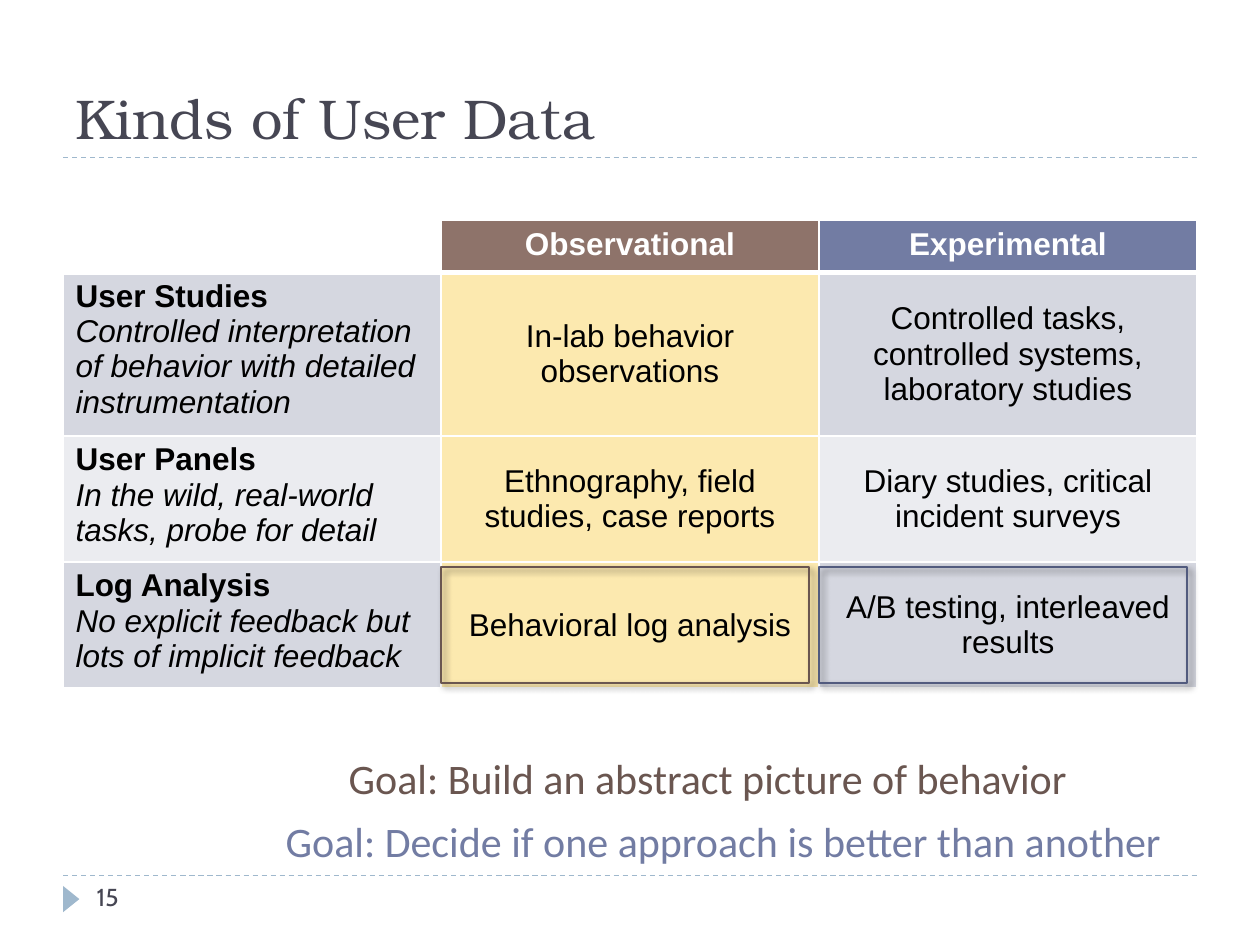
from lxml import etree
from pptx import Presentation
from pptx.dml.color import RGBColor
from pptx.enum import dml, shapes, text
from pptx.oxml import parse_xml
from pptx.oxml.ns import nsdecls, qn
from pptx.util import Cm, Pt

INK, ACCENT, BLACK, WHITE = "464653", "9FB8CD", "000000", "FFFFFF"
BROWN, BLUE = "6A5650", "727CA3"
LEFT, WIDTH, COLUMN = 1.27, 22.86, 7.62
TABLE_TOP = 4.45
ROW_HEIGHTS = [1.04, 3.3, 2.54, 2.54]
OBSERVED_FILL = "FCE9AF"
BANDS = ["D5D7E0", "EBECF0"]
HEADINGS = [("Observational", "8E736A"), ("Experimental", BLUE)]
METHODS = [
    ("User Studies",
     "Controlled interpretation of behavior with detailed instrumentation",
     "In-lab behavior observations",
     "Controlled tasks, controlled systems, laboratory studies"),
    ("User Panels",
     "In the wild, real-world tasks, probe for detail",
     "Ethnography, field studies, case reports",
     "Diary studies, critical incident surveys"),
    ("Log Analysis",
     "No explicit feedback but lots of implicit feedback",
     "Behavioral log analysis",
     "A/B testing, interleaved results"),
]
GOALS = [
    ("Goal: Build an abstract picture of behavior", 6.78, 15.04, 15.11, BROWN),
    ("Goal: Decide if one approach is better than another", 5.51, 16.31, 18.34, BLUE),
]


def rgb(value):
    return RGBColor.from_string(value)


def write(paragraph, words, color, align=text.PP_ALIGN.LEFT, **font_format):
    paragraph.alignment = align
    run = paragraph.add_run()
    run.text = words
    run.font.color.rgb = rgb(color)
    for name, value in font_format.items():
        setattr(run.font, name, value)


def add_title(slide, words):
    title = slide.shapes.title
    place = dict(left=Cm(LEFT), top=Cm(0.43), width=Cm(WIDTH), height=Cm(2.74))
    for name, value in place.items():
        setattr(title, name, value)
    title.text_frame.vertical_anchor = text.MSO_ANCHOR.BOTTOM
    write(title.text_frame.paragraphs[0], words, INK,
          size=Pt(32), name="TeX Gyre Bonum")


def add_rule(slide, y):
    rule = slide.shapes.add_connector(
        shapes.MSO_CONNECTOR.STRAIGHT, Cm(LEFT), Cm(y), Cm(LEFT + WIDTH), Cm(y))
    rule.line.color.rgb = rgb(ACCENT)
    rule.line.width = Pt(0.75)
    rule.line.dash_style = dml.MSO_LINE.DASH
    etree.SubElement(rule._element.spPr, qn("a:effectLst"))


def add_page_marker(slide):
    marker = slide.shapes.add_shape(
        shapes.MSO_SHAPE.ISOSCELES_TRIANGLE, Cm(1.17), Cm(17.96), Cm(0.53), Cm(0.33))
    marker.rotation = 90
    marker.shadow.inherit = False
    marker.fill.solid()
    marker.fill.fore_color.rgb = rgb(ACCENT)
    marker.line.fill.background()


def add_label(slide, words, left, top, width, height, color, fit=False, **font_format):
    """Add one line of text; with fit, the box takes the size of its text."""
    frame = slide.shapes.add_textbox(Cm(left), Cm(top), Cm(width), Cm(height)).text_frame
    frame.word_wrap = not fit
    if fit:
        frame.auto_size = text.MSO_AUTO_SIZE.SHAPE_TO_FIT_TEXT
    write(frame.paragraphs[0], words, color, **font_format)


def style_cell(cell, fill, bottom=1):
    """Draw white borders, then the fill, which must follow them in the XML."""
    properties = cell._tc.get_or_add_tcPr()
    for side, points in dict(L=1, R=1, T=1, B=bottom).items():
        properties.append(parse_xml(
            f'<a:ln{side} {nsdecls("a")} w="{Pt(points)}"><a:solidFill>'
            f'<a:srgbClr val="{WHITE}"/></a:solidFill></a:ln{side}>'))
    if fill:
        cell.fill.solid()
        cell.fill.fore_color.rgb = rgb(fill)
    else:
        cell.fill.background()


def add_methods_table(slide):
    table = slide.shapes.add_table(
        len(ROW_HEIGHTS), 3, Cm(LEFT), Cm(TABLE_TOP),
        Cm(WIDTH), Cm(sum(ROW_HEIGHTS))).table
    table.first_row = table.horz_banding = False
    for column in table.columns:
        column.width = Cm(COLUMN)
    for row, height in zip(table.rows, ROW_HEIGHTS):
        row.height = Cm(height)

    body = dict(size=Pt(18), name="Arial")
    centre = text.PP_ALIGN.CENTER
    style_cell(table.cell(0, 0), None, bottom=3)
    for column, (heading, fill) in enumerate(HEADINGS, 1):
        cell = table.cell(0, column)
        style_cell(cell, fill, bottom=3)
        write(cell.text_frame.paragraphs[0], heading, WHITE, centre, bold=True, **body)

    for row, (method, summary, *examples) in enumerate(METHODS, 1):
        band = BANDS[(row - 1) % 2]
        cell = table.cell(row, 0)
        style_cell(cell, band)
        write(cell.text_frame.paragraphs[0], method, BLACK, bold=True, **body)
        write(cell.text_frame.add_paragraph(), summary, BLACK, italic=True, **body)
        for column, (example, fill) in enumerate(zip(examples, [OBSERVED_FILL, band]), 1):
            cell = table.cell(row, column)
            style_cell(cell, fill)
            cell.vertical_anchor = text.MSO_ANCHOR.MIDDLE
            write(cell.text_frame.paragraphs[0], example, BLACK, centre, **body)


def add_highlight(slide, column, color):
    """Frame the log analysis cell of a column with a shadowed outline."""
    frame = slide.shapes.add_shape(
        shapes.MSO_SHAPE.RECTANGLE, Cm(LEFT + column * COLUMN), Cm(11.43),
        Cm(7.42), Cm(2.34))
    frame.fill.background()
    frame.line.color.rgb = rgb(color)
    frame.line.width = Pt(1.5)
    frame._element.spPr.append(parse_xml(
        f'<a:effectLst {nsdecls("a")}><a:outerShdw blurRad="{Pt(4)}" dist="{Pt(3)}" '
        f'dir="2700000" algn="tl" rotWithShape="0"><a:srgbClr val="{BLACK}">'
        '<a:alpha val="40000"/></a:srgbClr></a:outerShdw></a:effectLst>'))


def main():
    deck = Presentation()
    deck.slide_width, deck.slide_height = Cm(25.4), Cm(19.05)
    slide = deck.slides.add_slide(deck.slide_layouts[5])
    for y in (17.65, 3.18):
        add_rule(slide, y)
    add_page_marker(slide)
    add_title(slide, "Kinds of User Data")
    add_methods_table(slide)
    add_label(slide, "15", 1.7, 17.65, 5.51, 1.02, INK, size=Pt(14), name="Cabin")
    for column, color in enumerate([BROWN, "525B7E"], 1):
        add_highlight(slide, column, color)
    for goal, left, top, width, color in GOALS:
        add_label(slide, goal, left, top, width, 1.3, color, fit=True,
                  size=Pt(24), name="Calibri")
    deck.save("out.pptx")


if __name__ == "__main__":
    main()
